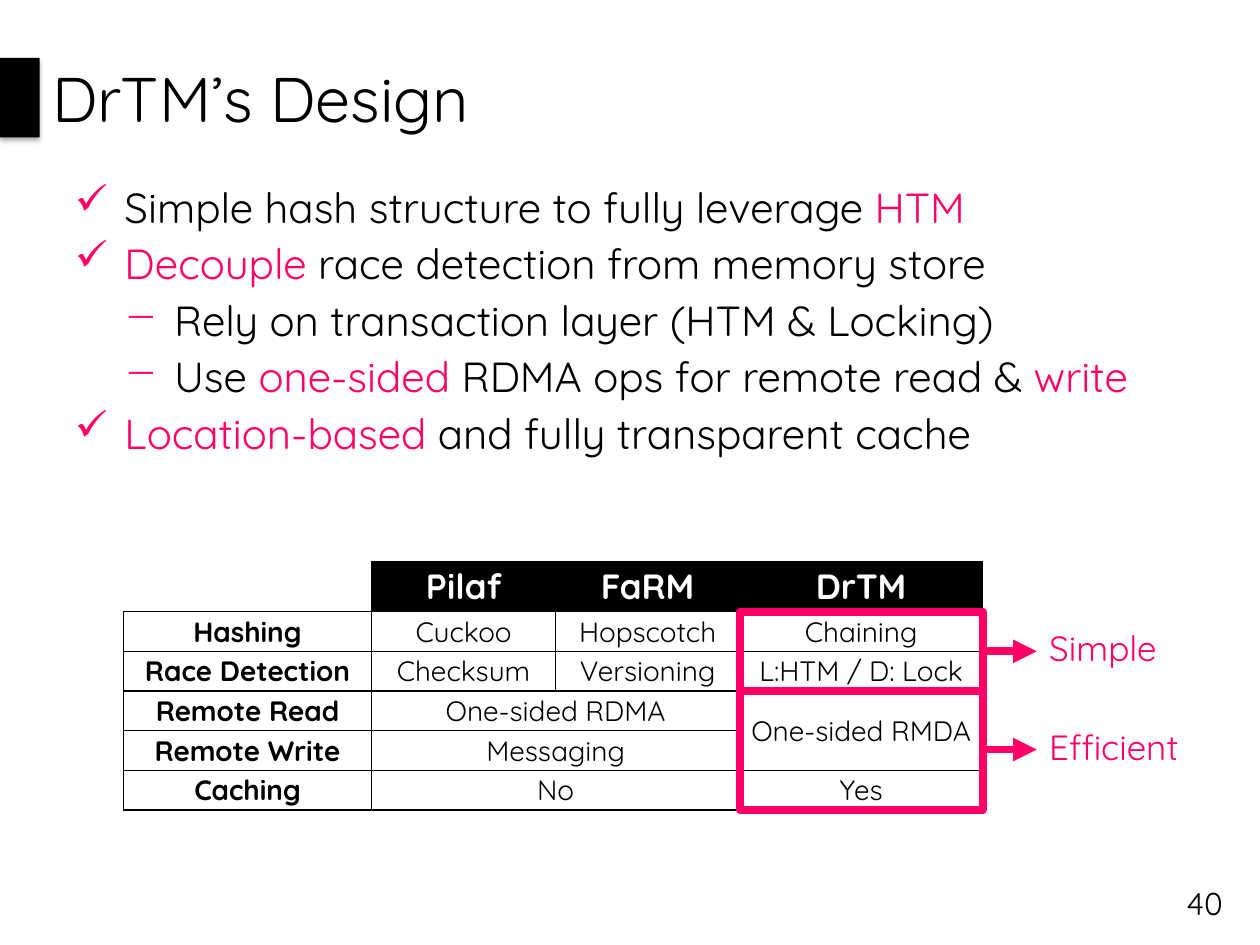
from dataclasses import dataclass

from lxml import etree
from pptx import Presentation
from pptx.dml.color import RGBColor
from pptx.enum.shapes import MSO_CONNECTOR, MSO_SHAPE
from pptx.enum.text import MSO_ANCHOR, PP_ALIGN
from pptx.oxml.ns import qn
from pptx.slide import Slide
from pptx.text.text import TextFrame, _Paragraph as Paragraph
from pptx.util import Cm, Pt

STRAIGHT = MSO_CONNECTOR.STRAIGHT
RECTANGLE = MSO_SHAPE.RECTANGLE
TOP, MIDDLE = MSO_ANCHOR.TOP, MSO_ANCHOR.MIDDLE
LEFT, CENTER, RIGHT = PP_ALIGN.LEFT, PP_ALIGN.CENTER, PP_ALIGN.RIGHT

BLACK = RGBColor(0x00, 0x00, 0x00)
WHITE = RGBColor(0xFF, 0xFF, 0xFF)
PINK = RGBColor(0xFF, 0x00, 0x66)
FONT = "Quicksand"

TABLE_TOP = 11.33
HEADER_HEIGHT = 1.0
ROW_HEIGHT = 0.8
SYSTEMS_LEFT, SYSTEMS_COLUMNS = 2.49, (5.0, 3.71, 3.71)
DRTM_LEFT = SYSTEMS_LEFT + sum(SYSTEMS_COLUMNS)
DRTM_WIDTH = 4.9
LABEL_LEFT = 20.9


@dataclass(frozen=True)
class Bullet:
    mark: str
    indent: float
    runs: tuple[tuple[str, RGBColor], ...]


@dataclass(frozen=True)
class Grid:
    left: float
    columns: tuple[float, ...]
    row_units: tuple[int, ...]
    rows: tuple[tuple[str, ...], ...]
    merged_rows: tuple[int, ...] = ()
    row_headings: bool = False


@dataclass(frozen=True)
class Callout:
    label: str
    first_unit: int
    units: int
    arrow_y: float


CHECK, DASH = ("✓", 1.75), ("−", 2.75)
BULLETS = (
    Bullet(*CHECK, (("Simple hash structure to fully leverage ", BLACK), ("HTM", PINK))),
    Bullet(*CHECK, (("Decouple ", PINK), ("race detection from memory store", BLACK))),
    Bullet(*DASH, (("Rely on transaction layer (HTM & Locking)", BLACK),)),
    Bullet(*DASH, (("Use ", BLACK), ("one-sided ", PINK),
                   ("RDMA ops for remote read & ", BLACK), ("write", PINK))),
    Bullet(*CHECK, (("Location-based", PINK), (" and fully transparent cache", BLACK))),
)
GRIDS = (
    Grid(DRTM_LEFT, (DRTM_WIDTH,), (1, 1, 2, 1),
         (("DrTM",), ("Chaining",), ("L:HTM / D: Lock",), ("One-sided RMDA",), ("Yes",))),
    Grid(SYSTEMS_LEFT, SYSTEMS_COLUMNS, (1,) * 5,
         (("", "Pilaf", "FaRM"),
          ("Hashing", "Cuckoo", "Hopscotch"),
          ("Race Detection", "Checksum", "Versioning"),
          ("Remote Read", "One-sided RDMA", ""),
          ("Remote Write", "Messaging", ""),
          ("Caching", "No", "")),
         merged_rows=(3, 4, 5), row_headings=True),
)
CALLOUTS = (Callout("Simple", 0, 2, 13.13), Callout("Efficient", 2, 3, 15.11))


def add_text(paragraph: Paragraph, text: str, *, size: float,
             color: RGBColor = BLACK, bold: bool = False) -> None:
    run = paragraph.add_run()
    run.text = text
    run.font.name = FONT
    run.font.size = Pt(size)
    run.font.bold = bold
    run.font.color.rgb = color


def add_frame(slide: Slide, left: float, top: float, width: float, height: float,
              anchor: MSO_ANCHOR = TOP) -> TextFrame:
    frame = slide.shapes.add_textbox(Cm(left), Cm(top), Cm(width), Cm(height)).text_frame
    frame.word_wrap = True
    frame.vertical_anchor = anchor
    return frame


def add_line_text(slide: Slide, text: str, box: tuple[float, float, float, float], *,
                  size: float, color: RGBColor = BLACK, align: PP_ALIGN = LEFT,
                  anchor: MSO_ANCHOR = MIDDLE, spacing: float = 1.0) -> None:
    paragraph = add_frame(slide, *box, anchor=anchor).paragraphs[0]
    paragraph.alignment = align
    paragraph.line_spacing = spacing
    add_text(paragraph, text, size=size, color=color)


def add_solid_fill(parent: etree._Element, color: RGBColor) -> etree._Element:
    fill = etree.SubElement(parent, qn("a:solidFill"))
    return etree.SubElement(fill, qn("a:srgbClr"), val=str(color))


def add_title_bar(slide: Slide) -> None:
    bar = slide.shapes.add_shape(RECTANGLE, Cm(0), Cm(1.17), Cm(0.8), Cm(1.6))
    bar.fill.solid()
    bar.fill.fore_color.rgb = BLACK
    bar.line.fill.background()
    bar.shadow.inherit = False
    effects = bar.element.spPr.find(qn("a:effectLst"))
    shadow = etree.SubElement(effects, qn("a:outerShdw"), blurRad=str(Pt(3.1)),
                              dist=str(Pt(1.8)), dir="5400000", rotWithShape="0")
    color = etree.SubElement(shadow, qn("a:srgbClr"), val=str(BLACK))
    etree.SubElement(color, qn("a:alpha"), val="35000")


def add_bullets(slide: Slide, bullets: tuple[Bullet, ...]) -> None:
    frame = add_frame(slide, 0.51, 3.53, 24.0, 9.8)
    for index, bullet in enumerate(bullets):
        paragraph = frame.add_paragraph() if index else frame.paragraphs[0]
        paragraph.space_before = Pt(3.5 if index else 0)
        for text, color in bullet.runs:
            add_text(paragraph, text, size=24, color=color)
        properties = paragraph._p.get_or_add_pPr()
        properties.set("marL", str(Cm(bullet.indent)))
        properties.set("indent", str(-Cm(1)))
        bullet_color = etree.SubElement(properties, qn("a:buClr"))
        etree.SubElement(bullet_color, qn("a:srgbClr"), val=str(PINK))
        etree.SubElement(properties, qn("a:buChar"), char=bullet.mark)


def add_borders(cell_properties: etree._Element, visible: str) -> None:
    for side in "LRTB":
        line = etree.SubElement(cell_properties, qn(f"a:ln{side}"), w=str(Pt(1)))
        if side in visible:
            add_solid_fill(line, BLACK)
        else:
            etree.SubElement(line, qn("a:noFill"))


def add_grid(slide: Slide, grid: Grid) -> None:
    heights = [HEADER_HEIGHT] + [units * ROW_HEIGHT for units in grid.row_units]
    table = slide.shapes.add_table(
        len(heights), len(grid.columns), Cm(grid.left), Cm(TABLE_TOP),
        Cm(sum(grid.columns)), Cm(sum(heights))).table
    table.first_row = table.horz_banding = False
    for column, width in zip(table.columns, grid.columns):
        column.width = Cm(width)
    for row_index, (row, height) in enumerate(zip(table.rows, heights)):
        row.height = Cm(height)
        header = row_index == 0
        for column_index, cell in enumerate(row.cells):
            text = grid.rows[row_index][column_index]
            corner = header and not text
            heading = header or (grid.row_headings and column_index == 0)
            add_borders(cell._tc.get_or_add_tcPr(), "RB" if corner else "LRTB")
            cell.fill.solid()
            cell.fill.fore_color.rgb = BLACK if header and text else WHITE
            cell.vertical_anchor = MIDDLE
            cell.margin_left = cell.margin_right = Cm(0.2)
            cell.margin_top = cell.margin_bottom = Cm(0)
            if text:
                paragraph = cell.text_frame.paragraphs[0]
                paragraph.alignment = CENTER
                add_text(paragraph, text, size=20 if header else 16,
                         color=WHITE if header else BLACK, bold=heading)
    for row_index in grid.merged_rows:
        table.cell(row_index, 1).merge(table.cell(row_index, 2))


def add_callout(slide: Slide, callout: Callout) -> None:
    top = TABLE_TOP + HEADER_HEIGHT + callout.first_unit * ROW_HEIGHT
    outline = slide.shapes.add_shape(RECTANGLE, Cm(DRTM_LEFT), Cm(top), Cm(DRTM_WIDTH),
                                     Cm(callout.units * ROW_HEIGHT))
    outline.fill.background()
    outline.shadow.inherit = False
    arrow = slide.shapes.add_connector(STRAIGHT, Cm(DRTM_LEFT + DRTM_WIDTH),
                                       Cm(callout.arrow_y), Cm(LABEL_LEFT), Cm(callout.arrow_y))
    for shape in (outline, arrow):
        shape.line.color.rgb = PINK
        shape.line.width = Pt(4.5)
    properties = arrow.element.spPr
    etree.SubElement(properties.find(qn("a:ln")), qn("a:tailEnd"), type="triangle")
    etree.SubElement(properties, qn("a:effectLst"))
    add_line_text(slide, callout.label, (LABEL_LEFT, callout.arrow_y - 0.52, 3.6, 1.03),
                  size=20, color=PINK, anchor=TOP, spacing=0.9)


def main() -> None:
    presentation = Presentation()
    presentation.slide_width, presentation.slide_height = Cm(25.4), Cm(19.05)
    slide = presentation.slides.add_slide(presentation.slide_layouts[6])
    add_title_bar(slide)
    add_line_text(slide, "40", (23.5, 17.7, 1.4, 1.02), size=18, align=RIGHT)
    add_line_text(slide, "DrTM’s Design", (0.8, 0, 24.6, 3.94), size=36)
    add_bullets(slide, BULLETS)
    for grid in GRIDS:
        add_grid(slide, grid)
    for callout in CALLOUTS:
        add_callout(slide, callout)
    presentation.save("out.pptx")


if __name__ == "__main__":
    main()
